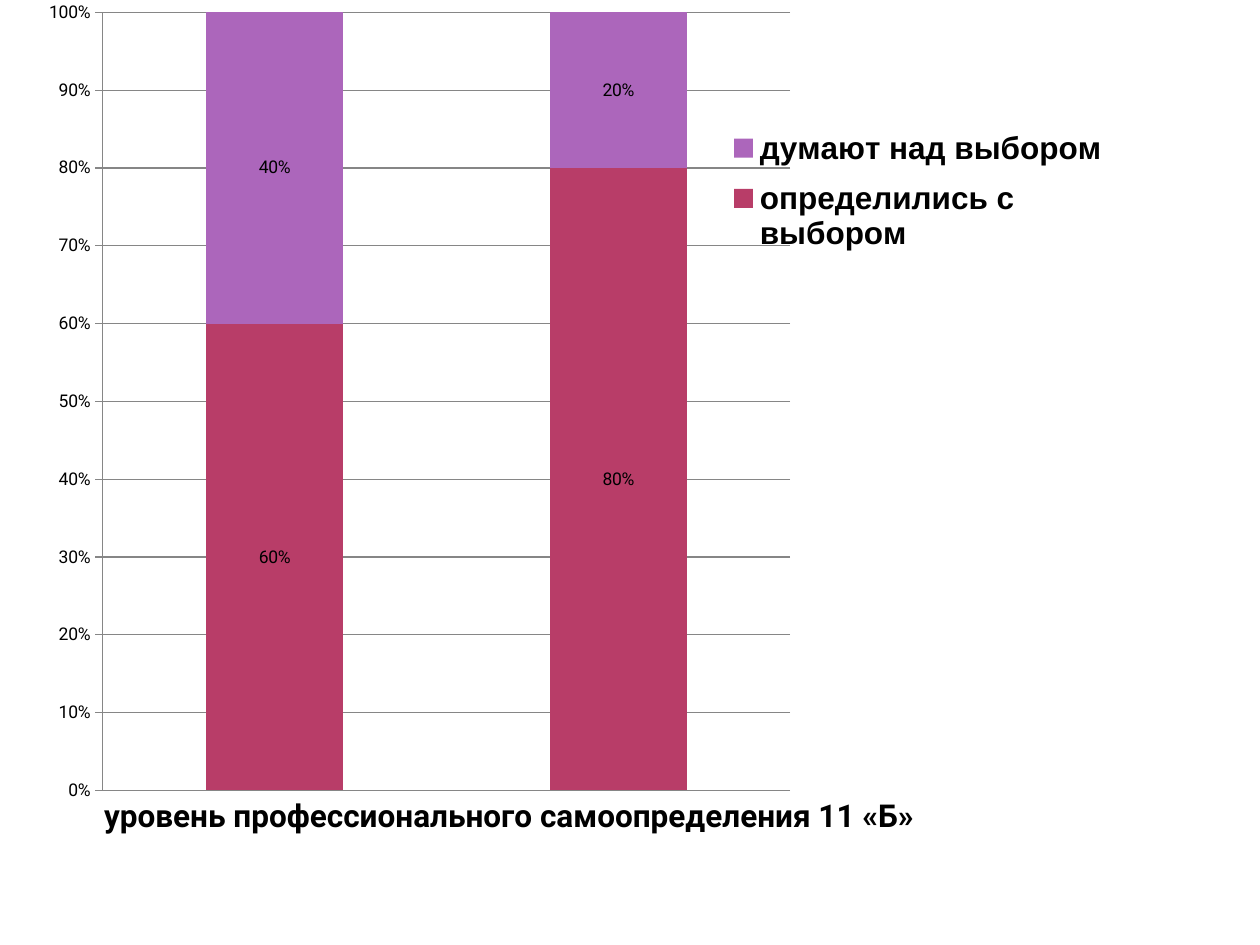
import dataclasses

import lxml.etree
import pptx
import pptx.chart.data
import pptx.dml.color
import pptx.enum.chart
import pptx.oxml.ns
import pptx.util


@dataclasses.dataclass(frozen=True)
class Theme:
    font: str = "Roboto"
    legend_font: str = "Arial"
    text: str = "000000"
    grid: str = "868686"
    decided: str = "B83D68"
    thinking: str = "AC66BB"
    label_size: int = 10
    heading_size: int = 18


THEME = Theme()
SLIDE_WIDTH = pptx.util.Inches(10)
SLIDE_HEIGHT = pptx.util.Inches(7.5)
CHART_BOX = (0.02, 0, 0.88, 0.94)

CLASSES = ("1", "2")
ANSWERS = (
    ("определились с выбором", (0.6, 0.8), THEME.decided),
    ("думают над выбором", (0.4, 0.2), THEME.thinking),
)


def rgb(value):
    return pptx.dml.color.RGBColor.from_string(value)


def style_font(font, name, size, bold=False):
    font.name = name
    font.size = pptx.util.Pt(size)
    font.bold = bold
    font.color.rgb = rgb(THEME.text)


def style_line(line):
    line.color.rgb = rgb(THEME.grid)
    line.width = pptx.util.Pt(0.75)


def set_layout(part, index, shares, inner=False):
    """Place a chart part at x, y (and w, h) given as shares of the chart."""
    qn = pptx.oxml.ns.qn
    for old in part.findall(qn("c:layout")):
        part.remove(old)
    layout = part.makeelement(qn("c:layout"))
    manual = lxml.etree.SubElement(layout, qn("c:manualLayout"))
    settings = [("layoutTarget", "inner")] if inner else []
    settings += [("xMode", "edge"), ("yMode", "edge")]
    settings += zip("xywh", shares)
    for tag, value in settings:
        lxml.etree.SubElement(manual, qn(f"c:{tag}")).set("val", str(value))
    part.insert(index, layout)


def style_axes(chart):
    chart.category_axis.visible = False
    share_axis = chart.value_axis
    share_axis.minimum_scale, share_axis.maximum_scale = 0, 1
    share_axis.major_unit = 0.1
    share_axis.major_tick_mark = pptx.enum.chart.XL_TICK_MARK.OUTSIDE
    share_axis.tick_labels.number_format = "0%"
    share_axis.tick_labels.number_format_is_linked = False
    style_line(share_axis.format.line)
    style_line(share_axis.major_gridlines.format.line)


def style_bars(plot):
    plot.gap_width = 150
    plot.overlap = 100
    plot.vary_by_categories = False
    for series, (_, _, color) in zip(plot.series, ANSWERS):
        series.format.fill.solid()
        series.format.fill.fore_color.rgb = rgb(color)
        labels = series.data_labels
        labels.show_value = True
        labels.number_format = "0%"
        labels.number_format_is_linked = False
        style_font(labels.font, THEME.font, THEME.label_size)


def add_heading(chart):
    chart.has_title = True
    frame = chart.chart_title.text_frame
    frame.text = "уровень профессионального самоопределения 11 «Б»"
    style_font(frame.paragraphs[0].runs[0].font, THEME.font, THEME.heading_size, True)
    title = chart.chart_title._element
    set_layout(title, 1, (0.066, 0.888))
    title.find(pptx.oxml.ns.qn("c:overlay")).set("val", "1")


def add_legend(chart):
    chart.has_legend = True
    legend = chart.legend
    legend.position = pptx.enum.chart.XL_LEGEND_POSITION.RIGHT
    legend.include_in_layout = False
    style_font(legend.font, THEME.legend_font, THEME.heading_size, True)
    set_layout(legend._element, 1, (0.62, 0.13, 0.37, 0.17))


def add_choice_chart(slide, box):
    left, top, width, height = box
    data = pptx.chart.data.CategoryChartData(number_format="0%")
    data.categories = CLASSES
    for name, shares, _ in ANSWERS:
        data.add_series(name, shares)
    chart = slide.shapes.add_chart(
        pptx.enum.chart.XL_CHART_TYPE.COLUMN_STACKED_100,
        int(left * SLIDE_WIDTH), int(top * SLIDE_HEIGHT),
        int(width * SLIDE_WIDTH), int(height * SLIDE_HEIGHT), data,
    ).chart
    style_font(chart.font, THEME.font, THEME.label_size)
    style_axes(chart)
    style_bars(chart.plots[0])
    add_heading(chart)
    add_legend(chart)
    plot_area = chart._chartSpace.chart.plotArea
    set_layout(plot_area, 0, (0.07, 0.014, 0.62, 0.876), inner=True)


def main():
    presentation = pptx.Presentation()
    presentation.slide_width = SLIDE_WIDTH
    presentation.slide_height = SLIDE_HEIGHT
    slide = presentation.slides.add_slide(presentation.slide_layouts[6])
    add_choice_chart(slide, CHART_BOX)
    presentation.save("out.pptx")


if __name__ == "__main__":
    main()
